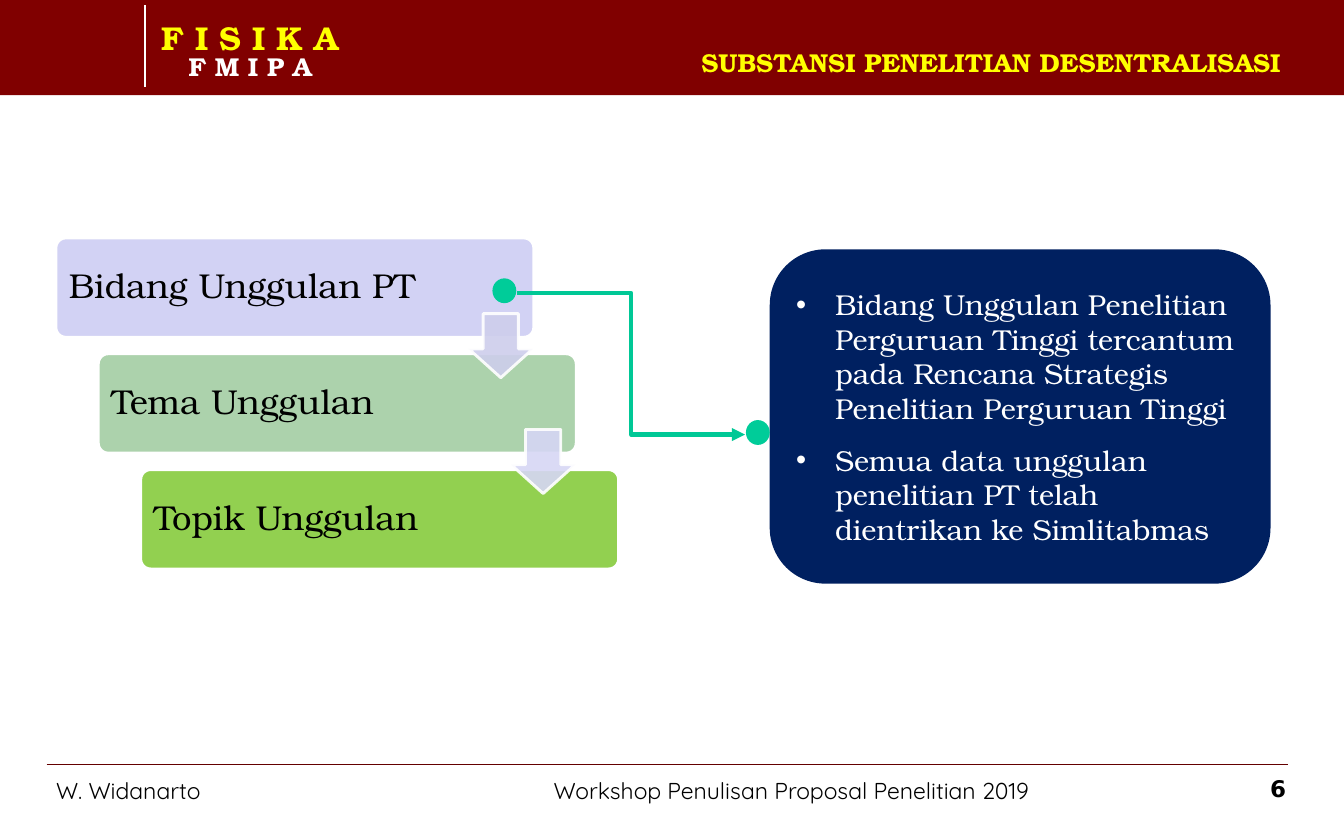
from lxml import etree
from pptx import Presentation
from pptx.dml.color import RGBColor
from pptx.enum.shapes import MSO_CONNECTOR as Connector, MSO_SHAPE as Shape
from pptx.enum.text import MSO_ANCHOR as Anchor, PP_ALIGN as Align
from pptx.oxml.ns import qn
from pptx.util import Pt

COLOURS = {
    "maroon": "800000", "rule": "640000", "yellow": "FFFF00",
    "white": "FFFFFF", "black": "000000", "navy": "002060",
    "lilac": "D2D2F4", "sage": "ACD2AC", "lime": "92D050",
    "arrow_1": "CECEEC", "arrow_2": "D6D6F5",
    "dot": "00CC99", "link": "00C896",
}
SERIF, SANS, NUMBER = "TeX Gyre Bonum", "Quicksand", "DejaVu Sans"

STEPS = [("Bidang Unggulan PT", "lilac"), ("Tema Unggulan", "sage"),
         ("Topik Unggulan", "lime")]
NOTES = [
    "Bidang Unggulan Penelitian Perguruan Tinggi tercantum pada "
    "Rencana Strategis Penelitian Perguruan Tinggi",
    "Semua data unggulan penelitian PT telah dientrikan ke Simlitabmas",
]
STEP_LEFT, STEP_TOP, STEP_DX, STEP_DY = 38.9, 165.6, 29.5, 80.6
STEP_WIDTH, STEP_HEIGHT = 332.6, 69.1
ARROW_LEFT, ARROW_TOP, ARROW_SIZE = 326.2, 218.2, 44.6


def colour(name):
    return RGBColor.from_string(COLOURS[name])


def set_margins(frame, across, down):
    frame.margin_left = frame.margin_right = Pt(across)
    frame.margin_top = frame.margin_bottom = Pt(down)


def style(para, font, size, tint, bold=False, align=Align.LEFT, spacing=None):
    para.alignment = align
    if spacing:
        para.line_spacing = spacing
    para.font.name = font
    para.font.size = Pt(size)
    para.font.bold = bold
    para.font.color.rgb = colour(tint)


def add_text(page, place, text, margins=(8, 4), wrap=True, anchor=Anchor.TOP):
    frame = page.shapes.add_textbox(*map(Pt, place)).text_frame
    frame.word_wrap = wrap
    frame.vertical_anchor = anchor
    set_margins(frame, *margins)
    frame.text = text
    return frame.paragraphs


def add_block(page, kind, place, fill, line=None, adjust=()):
    block = page.shapes.add_shape(kind, *map(Pt, place))
    block.shadow.inherit = False
    block.fill.solid()
    block.fill.fore_color.rgb = colour(fill)
    if line:
        block.line.color.rgb = colour(line)
        block.line.width = Pt(2)
    else:
        block.line.fill.background()
    for index, value in enumerate(adjust):
        block.adjustments[index] = value
    return block


def add_line(page, ends, tint, width, kind=Connector.STRAIGHT):
    line = page.shapes.add_connector(kind, *map(Pt, ends))
    line.line.color.rgb = colour(tint)
    line.line.width = Pt(width)
    etree.SubElement(line._element.spPr, qn("a:effectLst"))
    return line


def add_step(page, index, label, tint):
    place = (STEP_LEFT + index * STEP_DX, STEP_TOP + index * STEP_DY,
             STEP_WIDTH, STEP_HEIGHT)
    frame = add_block(page, Shape.ROUNDED_RECTANGLE, place, tint,
                      "white", [0.1]).text_frame
    set_margins(frame, 7.2, 7.2)
    frame.vertical_anchor = Anchor.MIDDLE
    frame.text = label
    style(frame.paragraphs[0], SERIF, 24, "black", spacing=0.9)


def add_step_arrow(page, index, tint):
    place = (ARROW_LEFT + index * STEP_DX, ARROW_TOP + index * STEP_DY,
             ARROW_SIZE, ARROW_SIZE)
    arrow = add_block(page, Shape.DOWN_ARROW, place, tint, "white", [0.55, 0.45])
    for tone in arrow._element.spPr.iter(qn("a:srgbClr")):
        etree.SubElement(tone, qn("a:alpha"), val="90000")


def add_bullet(para):
    properties = para._p.get_or_add_pPr()
    properties.set("marL", str(Pt(27)))
    properties.set("indent", str(-Pt(27)))
    etree.SubElement(properties, qn("a:buFont"), typeface="Arial")
    etree.SubElement(properties, qn("a:buChar"), char="•")


def add_notes_panel(page):
    panel = add_block(page, Shape.ROUNDED_RECTANGLE,
                      (535.7, 173.5, 348.5, 232.6), "navy")
    frame = panel.text_frame
    frame.vertical_anchor = Anchor.MIDDLE
    frame.text = "\n".join(NOTES)
    for index, para in enumerate(frame.paragraphs):
        add_bullet(para)
        style(para, SERIF, 20, "white")
        if index:
            para.space_before = Pt(12)


def add_link(page):
    for left, top in [(519.1, 292.3), (342.7, 193.7)]:
        add_block(page, Shape.OVAL, (left, top, 16.6, 17.3), "dot")
    link = add_line(page, (360, 203.8, 518.4, 302.4), "link", 3, Connector.ELBOW)
    etree.SubElement(link.line._get_or_add_ln(), qn("a:tailEnd"), type="triangle")


def add_header(page):
    add_block(page, Shape.RECTANGLE, (-0.7, 0, 936.7, 66.2), "maroon")
    add_line(page, (100.8, 3.6, 100.8, 60.5), "white", 1.5)
    name, faculty = add_text(page, (112.3, 17.3, 124.6, 39.6),
                             "F I S I K A\nF M I P A", (0, 0), wrap=False)
    style(name, SERIF, 23, "yellow", True, spacing=0.8)
    style(faculty, SERIF, 18, "white", True, Align.CENTER, 0.8)
    title = add_text(page, (354.2, 23.8, 545, 38.9),
                     "SUBSTANSI PENELITIAN DESENTRALISASI", anchor=Anchor.MIDDLE)
    style(title[0], SERIF, 18, "yellow", True, Align.RIGHT)


def add_footer(page):
    add_line(page, (32.4, 532.1, 896.4, 532.1), "rule", 1)
    for left, width, text in [
        (31, 123.8, "W. Widanarto"),
        (377.3, 369.4, "Workshop Penulisan Proposal Penelitian 2019"),
    ]:
        paras = add_text(page, (left, 540, width, 23.8), text, wrap=False)
        style(paras[0], SANS, 16, "black", spacing=0.8)
    number = add_text(page, (848.9, 535, 46.1, 32.4), "6", (0, 4))
    style(number[0], NUMBER, 16, "black", True, Align.RIGHT)


def main():
    deck = Presentation()
    deck.slide_width, deck.slide_height = Pt(935.3), Pt(578.2)
    page = deck.slides.add_slide(deck.slide_layouts[6])
    add_header(page)
    add_footer(page)
    for index, (label, tint) in enumerate(STEPS):
        add_step(page, index, label, tint)
    for index, tint in enumerate(["arrow_1", "arrow_2"]):
        add_step_arrow(page, index, tint)
    add_notes_panel(page)
    add_link(page)
    deck.save("out.pptx")


if __name__ == "__main__":
    main()
